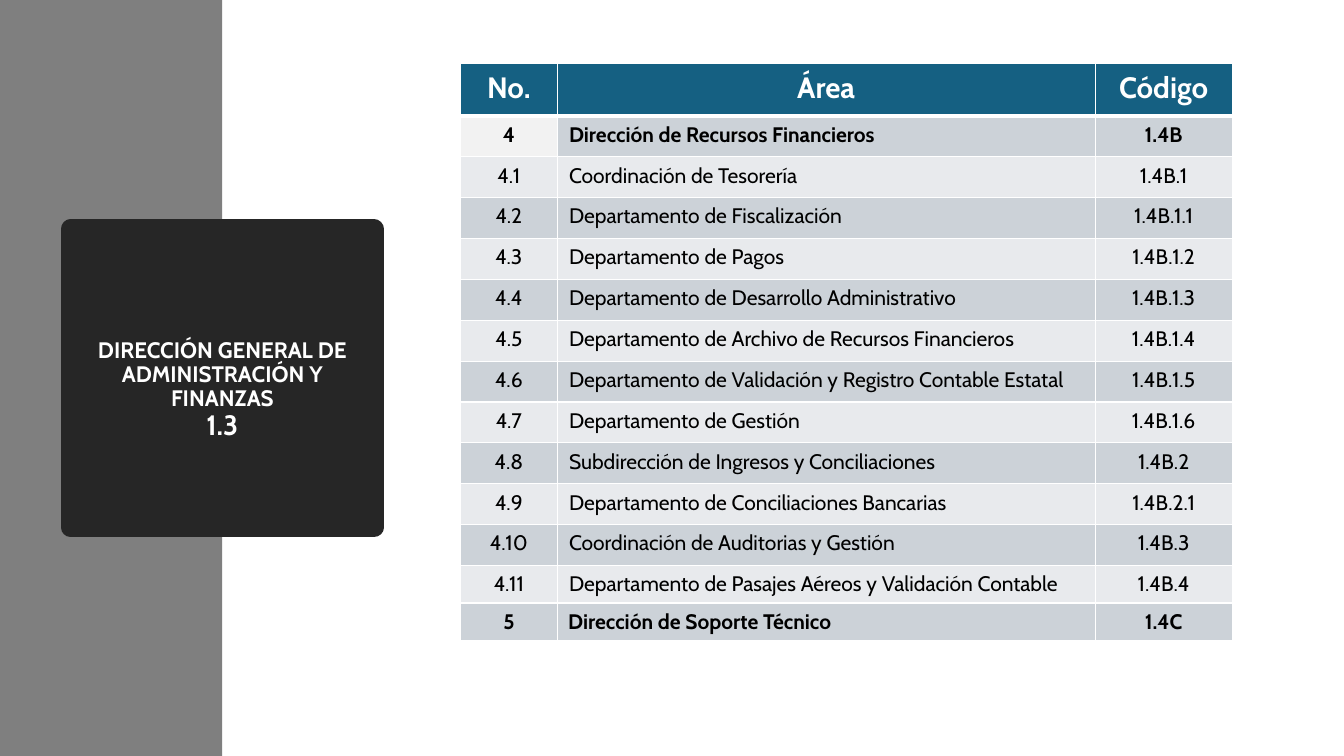
from lxml.etree import SubElement
from pptx import Presentation
from pptx.dml.color import RGBColor
from pptx.enum.shapes import MSO_SHAPE
from pptx.enum.text import MSO_ANCHOR, PP_ALIGN
from pptx.oxml.ns import qn
from pptx.util import Cm, Pt

FONT = "Cabin"
COLORS = {
    "band": "7F7F7F",
    "card": "262626",
    "header": "156082",
    "row_dark": "CCD2D8",
    "row_light": "E8EAED",
    "first_number": "F2F2F2",
    "white": "FFFFFF",
    "black": "000000",
}
HEADINGS = ("No.", "Área", "Código")
AREAS = [
    ("4", "Dirección de Recursos Financieros", "1.4B"),
    ("4.1", "Coordinación de Tesorería", "1.4B.1"),
    ("4.2", "Departamento de Fiscalización", "1.4B.1.1"),
    ("4.3", "Departamento de Pagos", "1.4B.1.2"),
    ("4.4", "Departamento de Desarrollo Administrativo", "1.4B.1.3"),
    ("4.5", "Departamento de Archivo de Recursos Financieros", "1.4B.1.4"),
    ("4.6", "Departamento de Validación y Registro Contable Estatal", "1.4B.1.5"),
    ("4.7", "Departamento de Gestión", "1.4B.1.6"),
    ("4.8", "Subdirección de Ingresos y Conciliaciones", "1.4B.2"),
    ("4.9", "Departamento de Conciliaciones Bancarias", "1.4B.2.1"),
    ("4.10", "Coordinación de Auditorias y Gestión", "1.4B.3"),
    ("4.11", "Departamento de Pasajes Aéreos y Validación Contable", "1.4B.4"),
    ("5", "Dirección de Soporte Técnico", "1.4C"),
]
COLUMN_WIDTHS = (2.43, 13.56, 3.45)
ROW_HEIGHTS = [1.31] + [1.03] * 11 + [0.93] * 2


def color(name):
    return RGBColor.from_string(COLORS[name])


def add_run(paragraph, text, size, color_name, bold):
    run = paragraph.add_run()
    run.text = text
    run.font.name = FONT
    run.font.size = Pt(size)
    run.font.bold = bold
    run.font.color.rgb = color(color_name)


def add_block(slide, left, top, width, height, fill):
    shape = slide.shapes.add_shape(
        MSO_SHAPE.RECTANGLE, Cm(left), Cm(top), Cm(width), Cm(height))
    shape.shadow.inherit = False
    shape.fill.solid()
    shape.fill.fore_color.rgb = color(fill)
    shape.line.fill.background()
    return shape


def add_title_card(slide):
    card = add_block(slide, 1.78, 5.77, 7.65, 7.52, "card")
    # Thick outline with round corners
    card.line.color.rgb = color("card")
    card.line.width = Pt(13.75)
    SubElement(card.line._get_or_add_ln(), qn("a:round"))
    # Title sits slightly below the middle
    frame = card.text_frame
    frame.word_wrap = True
    frame.vertical_anchor = MSO_ANCHOR.MIDDLE
    frame.margin_top = Cm(0.74)
    paragraph = frame.paragraphs[0]
    paragraph.alignment = PP_ALIGN.CENTER
    paragraph.line_spacing = 0.9
    add_run(paragraph, "DIRECCIÓN GENERAL DE ADMINISTRACIÓN Y FINANZAS",
            16, "white", True)
    paragraph.add_line_break()
    add_run(paragraph, "1.3", 20, "white", True)


def set_borders(cell, top, bottom):
    properties = cell._tc.get_or_add_tcPr()
    for side, points in (("L", 1), ("R", 1), ("T", top), ("B", bottom)):
        line = SubElement(properties, qn(f"a:ln{side}"), w=str(Pt(points)))
        fill = SubElement(line, qn("a:solidFill"))
        SubElement(fill, qn("a:srgbClr"), val=COLORS["white"])


def cell_fill(row, column):
    if row == 0:
        return "header"
    if (row, column) == (1, 0):
        return "first_number"
    return "row_dark" if row % 2 else "row_light"


def fill_cell(cell, text, row, column):
    is_header = row == 0
    # Borders go before the fill in the cell properties
    set_borders(cell, top=3 if row == 1 else 1, bottom=3 if is_header else 1)
    cell.fill.solid()
    cell.fill.fore_color.rgb = color(cell_fill(row, column))
    cell.margin_left = cell.margin_right = Cm(
        0.28 if row == len(AREAS) else 0.3)
    cell.margin_top = cell.margin_bottom = Cm(0.15)
    paragraph = cell.text_frame.paragraphs[0]
    centered = is_header or column != 1
    paragraph.alignment = PP_ALIGN.CENTER if centered else PP_ALIGN.LEFT
    add_run(paragraph, text, 21 if is_header else 15,
            "white" if is_header else "black",
            row in (0, 1, len(AREAS)))


def add_area_table(slide):
    rows = [HEADINGS] + AREAS
    table = slide.shapes.add_table(
        len(rows), len(HEADINGS), Cm(11.61), Cm(1.61),
        Cm(sum(COLUMN_WIDTHS)), Cm(sum(ROW_HEIGHTS))).table
    for column, width in zip(table.columns, COLUMN_WIDTHS):
        column.width = Cm(width)
    for row, height in zip(table.rows, ROW_HEIGHTS):
        row.height = Cm(height)
    for row, texts in enumerate(rows):
        for column, text in enumerate(texts):
            fill_cell(table.cell(row, column), text, row, column)


def main():
    presentation = Presentation()
    presentation.slide_width = Cm(33.87)
    presentation.slide_height = Cm(19.05)
    slide = presentation.slides.add_slide(presentation.slide_layouts[6])
    # Side band and title
    add_block(slide, 0, 0, 5.6, 19.05, "band")
    add_title_card(slide)
    # List of areas
    add_area_table(slide)
    presentation.save("out.pptx")


if __name__ == "__main__":
    main()
